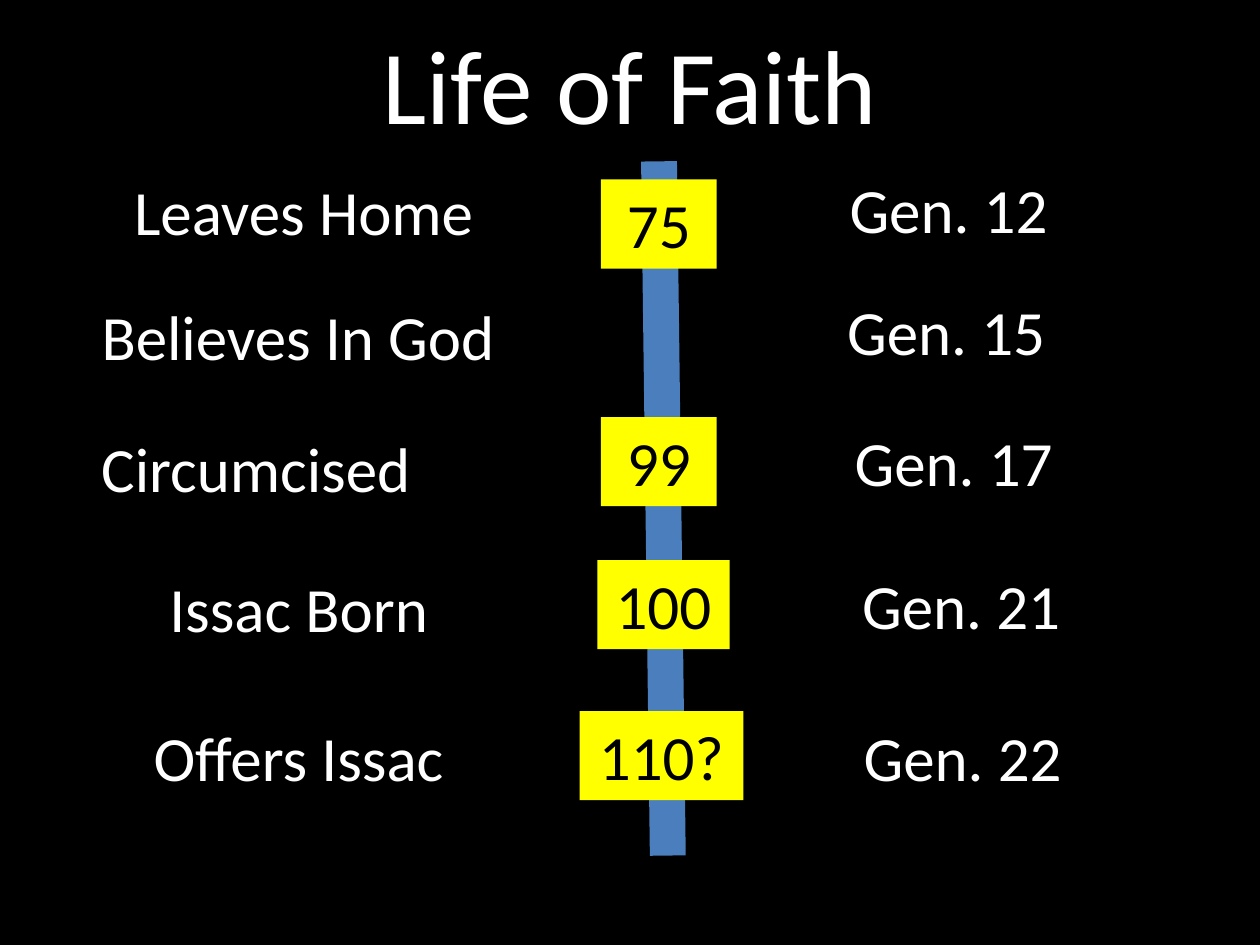
from lxml import etree
from pptx import Presentation
from pptx.dml.color import RGBColor
from pptx.enum.shapes import MSO_CONNECTOR, MSO_SHAPE
from pptx.enum.text import MSO_ANCHOR, MSO_AUTO_SIZE, PP_ALIGN
from pptx.oxml.ns import qn
from pptx.util import Pt

CENTER = PP_ALIGN.CENTER
MIDDLE, TOP = MSO_ANCHOR.MIDDLE, MSO_ANCHOR.TOP
FIT_SHAPE = MSO_AUTO_SIZE.SHAPE_TO_FIT_TEXT
RECTANGLE = MSO_SHAPE.RECTANGLE
STRAIGHT = MSO_CONNECTOR.STRAIGHT

BLACK = RGBColor(0x00, 0x00, 0x00)
WHITE = RGBColor(0xFF, 0xFF, 0xFF)
YELLOW = RGBColor(0xFF, 0xFF, 0x00)
BLUE = RGBColor(0x4B, 0x7E, 0xBC)
FONT = "Calibri"

TITLE = "Life of Faith"
ROW_HEIGHT = 51
WIDE = 253.4
TIMELINE = (381.6, 488.9, 376.6, 92.2)

# text, left, top, width
EVENTS = [
    ("Leaves Home", 46.8, 95, WIDE),
    ("Believes In God", 49.7, 166.5, 241.2),
    ("Circumcised", 49.7, 242, 193),
    ("Issac Born", 88.6, 322, 164.2),
    ("Offers Issac", 79.2, 407, 182.9),
]
REFERENCES = [
    ("Gen. 12", 415.4, 93.6, WIDE),
    ("Gen. 15", 414, 163.4, WIDE),
    ("Gen. 17", 418.3, 238.3, WIDE),
    ("Gen. 21", 422.6, 320.4, WIDE),
    ("Gen. 22", 423.4, 406.8, WIDE),
]
AGES = [
    ("75", 343.4, 102.5, 66.2),
    ("99", 343.4, 238.3, 66.2),
    ("100", 341.3, 320, 75.6),
    ("110?", 331.2, 406.3, 93.6),
]


def write(shape, text, size, color, anchor):
    frame = shape.text_frame
    frame.text = text
    frame.vertical_anchor = anchor
    paragraph = frame.paragraphs[0]
    paragraph.alignment = CENTER
    font = paragraph.runs[0].font
    font.name = FONT
    font.size = Pt(size)
    font.color.rgb = color


def add_label(slide, text, left, top, width):
    box = slide.shapes.add_textbox(Pt(left), Pt(top), Pt(width), Pt(ROW_HEIGHT))
    write(box, text, 36, WHITE, TOP)
    box.text_frame.word_wrap = width == WIDE
    box.text_frame.auto_size = FIT_SHAPE


def add_age(slide, text, left, top, width):
    box = slide.shapes.add_shape(
        RECTANGLE, Pt(left), Pt(top), Pt(width), Pt(ROW_HEIGHT))
    box.shadow.inherit = False
    box.fill.solid()
    box.fill.fore_color.rgb = YELLOW
    box.line.fill.background()
    write(box, text, 36, BLACK, TOP)
    box.text_frame.word_wrap = True
    box.text_frame.auto_size = FIT_SHAPE


def add_timeline(slide):
    line = slide.shapes.add_connector(STRAIGHT, *map(Pt, TIMELINE))
    line.line.color.rgb = BLUE
    line.line.width = Pt(20.5)
    etree.SubElement(line._element.spPr, qn("a:effectLst"))


def main():
    presentation = Presentation()
    presentation.slide_width, presentation.slide_height = Pt(720), Pt(540)
    slide = presentation.slides.add_slide(presentation.slide_layouts[5])
    slide.background.fill.solid()
    slide.background.fill.fore_color.rgb = BLACK

    title = slide.shapes.title
    title.left, title.top, title.width, title.height = map(Pt, (36, 2.2, 648, 90))
    write(title, TITLE, 60, WHITE, MIDDLE)

    for event in EVENTS:
        add_label(slide, *event)
    add_timeline(slide)
    for reference in REFERENCES:
        add_label(slide, *reference)
    for age in AGES:
        add_age(slide, *age)

    presentation.save("out.pptx")


if __name__ == "__main__":
    main()
